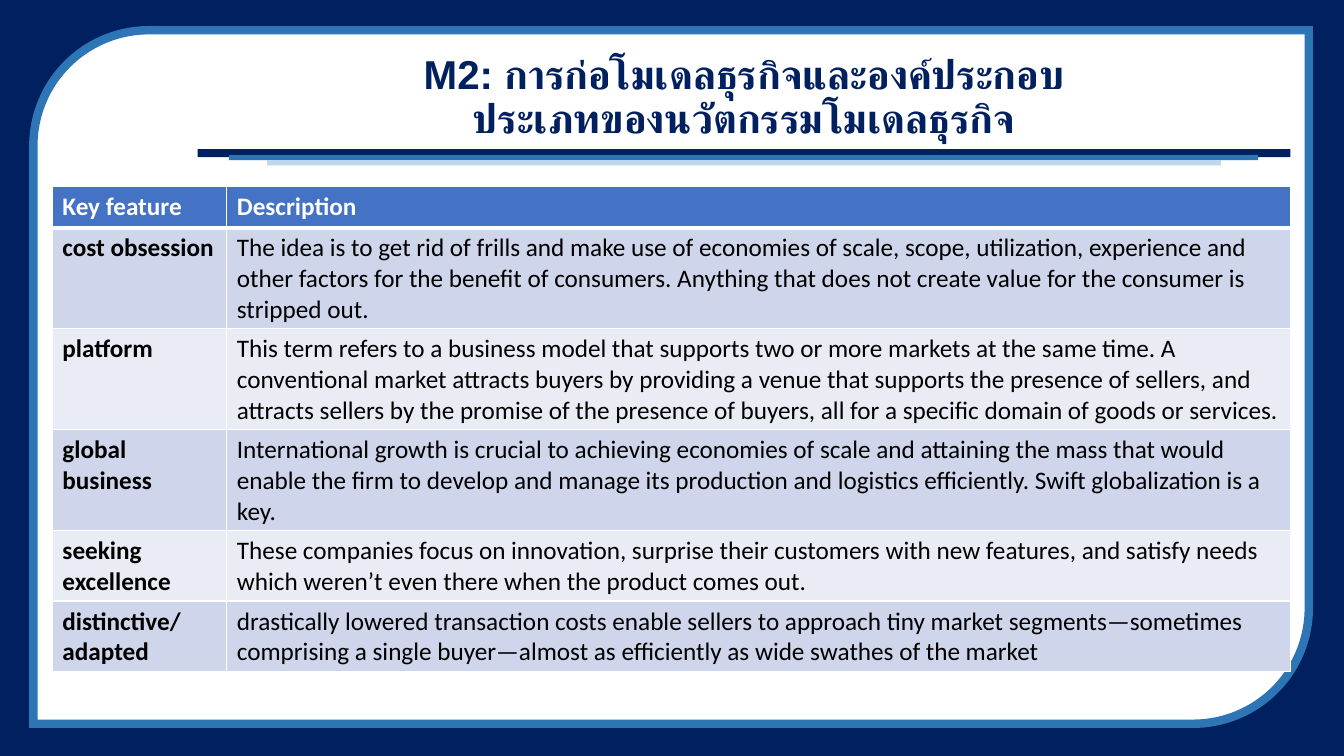
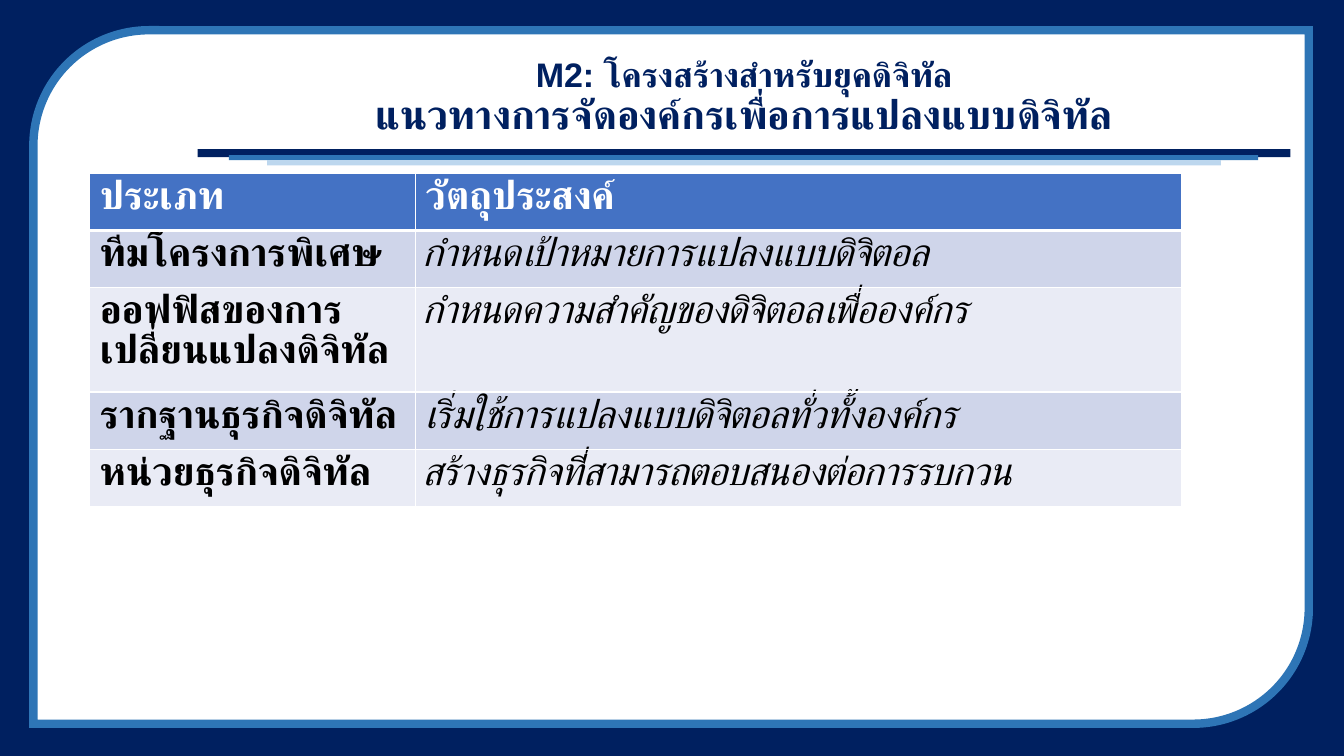
from lxml.etree import SubElement
from pptx import Presentation
from pptx.dml.color import RGBColor
from pptx.enum.lang import MSO_LANGUAGE_ID as LANGUAGE
from pptx.enum.shapes import MSO_SHAPE as SHAPE
from pptx.enum.text import MSO_ANCHOR as ANCHOR, PP_ALIGN as ALIGN
from pptx.oxml.ns import qn
from pptx.util import Inches, Pt

NAVY = RGBColor(0x00, 0x20, 0x60)
BLUE = RGBColor(0x2E, 0x75, 0xB6)
PALE_BLUE = RGBColor(0xBD, 0xD7, 0xEE)
HEADER_BLUE = RGBColor(0x44, 0x72, 0xC4)
BAND_DARK = RGBColor(0xCF, 0xD5, 0xEA)
BAND_LIGHT = RGBColor(0xE9, 0xEB, 0xF5)
WHITE = RGBColor(0xFF, 0xFF, 0xFF)
BLACK = RGBColor(0x00, 0x00, 0x00)

presentation = Presentation()
presentation.slide_width = Inches(13.33)
presentation.slide_height = Inches(7.5)
blank_layout = presentation.slide_layouts[6]


def share(*percents):
    """Turn percents, by turns of the slide's width and height, into lengths."""
    sides = (presentation.slide_width, presentation.slide_height)
    return [int(sides[i % 2] * percent / 100) for i, percent in enumerate(percents)]


def write(paragraph, text, size, color, font="Calibri", bold=False, italic=False,
          complex_font=None, language=None):
    run = paragraph.add_run()
    run.text = text
    run.font.name, run.font.size = font, Pt(size)
    run.font.bold, run.font.italic = bold, italic
    run.font.color.rgb = color
    if language:
        run.font.language_id = language
    if complex_font:
        SubElement(run.font._element, qn("a:cs"), typeface=complex_font)


# Frame and title rules on every slide: shape, fill, outline, place in percent
BACKDROP = [
    (SHAPE.RECTANGLE, NAVY, None, (0, 0, 100, 100)),
    (SHAPE.ROUND_2_DIAG_RECTANGLE, WHITE, BLUE, (2.48, 4, 94.9, 91.73)),
    (SHAPE.RECTANGLE, NAVY, None, (14.7, 19.73, 81.32, 1.07)),
    (SHAPE.RECTANGLE, BLUE, None, (17.03, 20.53, 76.59, 0.67)),
    (SHAPE.RECTANGLE, PALE_BLUE, None, (19.88, 21.2, 70.97, 0.67)),
]
TITLE_PLACE = (14.7, 6.53, 81.32, 12.93)
ROW_HEIGHT = 5.47  # least height in percent; rows grow with their text

# Each slide: title lines with sizes, table corner, column shares, rows
SLIDES = [
    {
        "title": [("M2: การก่อโมเดลธุรกิจและองค์ประกอบ", 28.8),
                  ("ประเภทของนวัตกรรมโมเดลธุรกิจ", 28.8)],
        "corner": (3.9, 24.67),
        "columns": (12.98, 79.14),
        "height": 68.13,
        "size": 18,
        "italic": False,
        "language": LANGUAGE.ENGLISH_US,
        "rows": [
            ("Key feature", "Description"),
            ("cost obsession",
             "The idea is to get rid of frills and make use of economies of scale, "
             "scope, utilization, experience and other factors for the benefit of "
             "consumers. Anything that does not create value for the consumer is "
             "stripped out."),
            ("platform",
             "This term refers to a business model that supports two or more markets "
             "at the same time. A conventional market attracts buyers by providing a "
             "venue that supports the presence of sellers, and attracts sellers by "
             "the promise of the presence of buyers, all for a specific domain of "
             "goods or services."),
            ("global business",
             "International growth is crucial to achieving economies of scale and "
             "attaining the mass that would enable the firm to develop and manage "
             "its production and logistics efficiently. Swift globalization is a key."),
            ("seeking excellence",
             "These companies focus on innovation, surprise their customers with new "
             "features, and satisfy needs which weren’t even there when the product "
             "comes out."),
            ("distinctive/ adapted",
             "drastically lowered transaction costs enable sellers to approach tiny "
             "market segments—sometimes comprising a single buyer—almost as "
             "efficiently as wide swathes of the market"),
        ],
    },
    {
        "title": [("M2: โครงสร้างสำหรับยุคดิจิทัล", 24.3),
                  ("แนวทางการจัดองค์กรเพื่อการแปลงแบบดิจิทัล", 28.8)],
        "corner": (6.68, 22.93),
        "columns": (24.23, 57.01),
        "height": 44,
        "size": 28,
        "italic": True,
        "language": LANGUAGE.THAI,
        "rows": [
            ("ประเภท", "วัตถุประสงค์"),
            ("ทีมโครงการพิเศษ", "กำหนดเป้าหมายการแปลงแบบดิจิตอล"),
            ("ออฟฟิสของการเปลี่ยนแปลงดิจิทัล", "กำหนดความสำคัญของดิจิตอลเพื่อองค์กร"),
            ("รากฐานธุรกิจดิจิทัล", "เริ่มใช้การแปลงแบบดิจิตอลทั่วทั้งองค์กร"),
            ("หน่วยธุรกิจดิจิทัล", "สร้างธุรกิจที่สามารถตอบสนองต่อการรบกวน"),
        ],
    },
]

for content in SLIDES:
    slide = presentation.slides.add_slide(blank_layout)

    # Frame and rules
    for kind, fill, outline, place in BACKDROP:
        shape = slide.shapes.add_shape(kind, *share(*place))
        shape.shadow.inherit = False
        shape.fill.solid()
        shape.fill.fore_color.rgb = fill
        if outline:
            shape.line.color.rgb = outline
            shape.line.width = Pt(6)
            SubElement(shape.line._get_or_add_ln(), qn("a:miter"), lim="800000")
        else:
            shape.line.fill.background()

    # Title
    title_frame = slide.shapes.add_textbox(*share(*TITLE_PLACE)).text_frame
    title_frame.word_wrap = True
    title_frame.vertical_anchor = ANCHOR.MIDDLE
    paragraph = title_frame.paragraphs[0]
    paragraph.alignment = ALIGN.CENTER
    paragraph.line_spacing = 0.9
    for number, (line, size) in enumerate(content["title"]):
        if number:
            paragraph.add_line_break()
        write(paragraph, line, size, NAVY, font="Arial", bold=True, complex_font="Arial")

    # Table
    rows, columns = content["rows"], content["columns"]
    place = share(*content["corner"], sum(columns), content["height"])
    graphic_frame = slide.shapes.add_table(len(rows), len(columns), *place)
    table = graphic_frame.table
    for column, width in zip(table.columns, columns):
        column.width = share(width)[0]
    for row in table.rows:
        row.height = share(0, ROW_HEIGHT)[1]
    graphic_frame.height = place[3]

    for row_number, texts in enumerate(rows):
        is_header = row_number == 0
        band = HEADER_BLUE if is_header else (BAND_LIGHT, BAND_DARK)[row_number % 2]
        for column_number, text in enumerate(texts):
            cell = table.cell(row_number, column_number)
            is_label = is_header or column_number == 0
            write(cell.text_frame.paragraphs[0], text, content["size"],
                  WHITE if is_header else BLACK, bold=is_label,
                  italic=content["italic"] and not is_label,
                  language=content["language"])

            # White cell borders, thicker between header and body
            properties = cell._tc.get_or_add_tcPr()
            for side in "LRTB":
                thick = (is_header and side == "B") or (row_number == 1 and side == "T")
                border = SubElement(properties, qn(f"a:ln{side}"),
                                    w=str(Pt(3 if thick else 1)))
                border_fill = SubElement(border, qn("a:solidFill"))
                SubElement(border_fill, qn("a:srgbClr"), val=str(WHITE))
            cell.fill.solid()
            cell.fill.fore_color.rgb = band

presentation.save("out.pptx")
